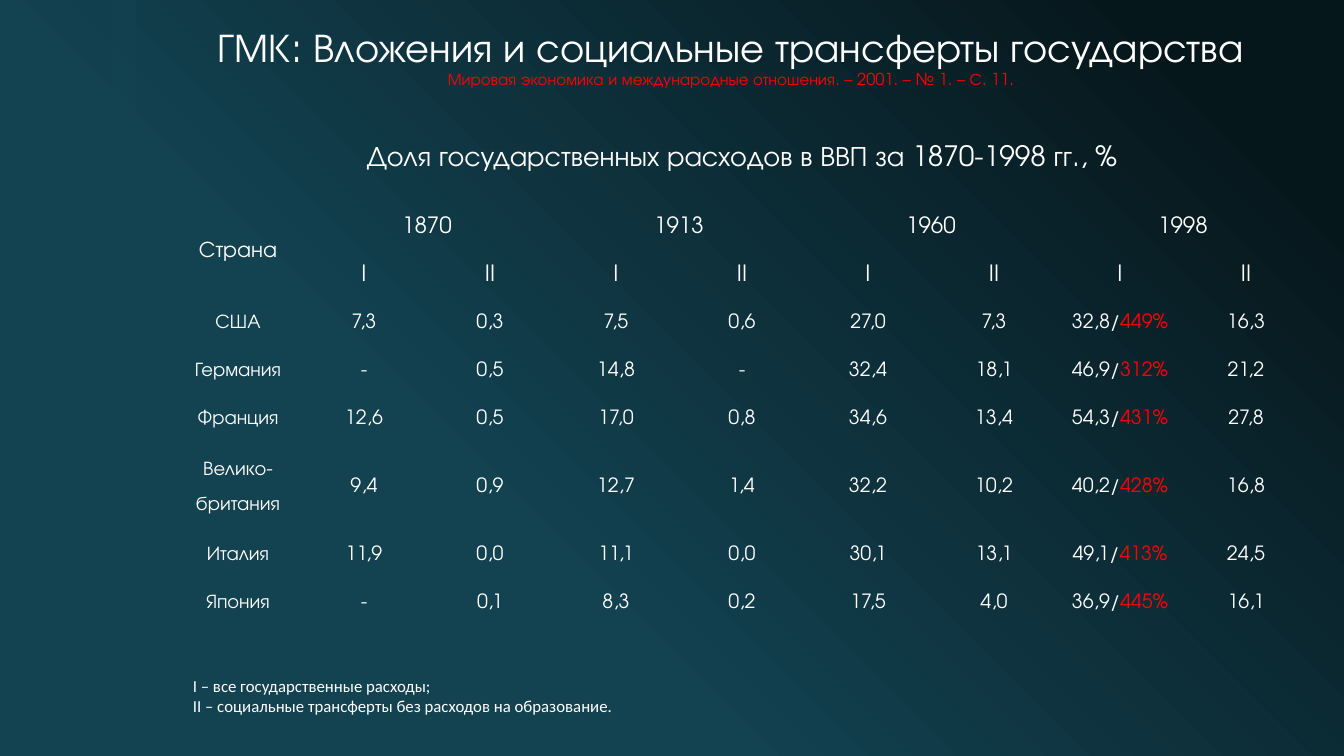
from lxml import etree
from pptx import Presentation
from pptx import util as u
from pptx.dml.color import RGBColor
from pptx.enum import shapes, text
from pptx.oxml import ns

PX = 12192000 / 1344
WHITE = RGBColor(0xFF, 0xFF, 0xFF)
RED = RGBColor(0xFF, 0x00, 0x00)
TEAL = RGBColor(0x13, 0x42, 0x51)
DARK = RGBColor(0x06, 0x17, 0x1C)
FONT = "TeX Gyre Adventor"
PLAIN_STYLE = "{2D5ABB26-0587-4C30-8999-92F81FD0307C}"


def px(*lengths):
    return [u.Emu(round(length * PX)) for length in lengths]


def add_run(paragraph, words, size, color=WHITE, font=FONT):
    run = paragraph.add_run()
    run.text = words
    run.font.size = u.Pt(size)
    run.font.name = font
    run.font.color.rgb = color


presentation = Presentation()
presentation.slide_width, presentation.slide_height = px(1344, 756)
slide = presentation.slides.add_slide(presentation.slide_layouts[6])

# Background gradient, dark in the top right corner
fill = slide.background.fill
fill.gradient()
fill.gradient_angle = 225
stops = slide.background._cSld.find(".//" + ns.qn("a:gsLst"))
for stop in list(stops):
    stops.remove(stop)
for position, color in [(10, DARK), (65, TEAL), (100, TEAL)]:
    stop = etree.SubElement(stops, ns.qn("a:gs"), pos=str(position * 1000))
    etree.SubElement(stop, ns.qn("a:srgbClr"), val=str(color))

# Translucent vertical band
band = slide.shapes.add_shape(shapes.MSO_SHAPE.RECTANGLE, *px(111, 0, 25, 756))
band.shadow.inherit = False
band.fill.solid()
band.fill.fore_color.rgb = TEAL
band.line.fill.background()
band_color = band.fill._xPr.find(".//" + ns.qn("a:srgbClr"))
etree.SubElement(band_color, ns.qn("a:alpha"), val="60000")

# Title and its source
title = slide.shapes.add_textbox(*px(140, 23, 1182, 71))
title.text_frame.word_wrap = True
title.text_frame.vertical_anchor = text.MSO_ANCHOR.BOTTOM
paragraph = title.text_frame.paragraphs[0]
paragraph.alignment = text.PP_ALIGN.CENTER
paragraph.line_spacing = 0.9
add_run(paragraph, "ГМК: Вложения и социальные трансферты государства", 28.8)
paragraph.add_line_break()
add_run(paragraph, "Мировая экономика и международные отношения. – 2001. – № 1. – С. 11.", 11.7, RED)

# Table of state spending
YEARS = ["1870", "1913", "1960", "1998"]
COUNTRIES = [
    ["США", "7,3", "0,3", "7,5", "0,6", "27,0", "7,3", "32,8/449%", "16,3"],
    ["Германия", "-", "0,5", "14,8", "-", "32,4", "18,1", "46,9/312%", "21,2"],
    ["Франция", "12,6", "0,5", "17,0", "0,8", "34,6", "13,4", "54,3/431%", "27,8"],
    ["Велико-\nбритания", "9,4", "0,9", "12,7", "1,4", "32,2", "10,2", "40,2/428%", "16,8"],
    ["Италия", "11,9", "0,0", "11,1", "0,0", "30,1", "13,1", "49,1/413%", "24,5"],
    ["Япония", "-", "0,1", "8,3", "0,2", "17,5", "4,0", "36,9/445%", "16,1"],
]
year_row = ["Страна"]
for year in YEARS:
    year_row += [year, ""]
rows = [
    ["Доля государственных расходов в ВВП за 1870-1998 гг., %"] + [""] * 8,
    year_row,
    [""] + ["I", "II"] * len(YEARS),
] + COUNTRIES
HEIGHTS = [68, 48, 48, 48, 48, 48, 88, 48, 48]
SIZES = [20, 16, 16] + [14] * len(COUNTRIES)

frame = slide.shapes.add_table(len(rows), 9, *px(175, 134, 1134, sum(HEIGHTS)))
table = frame.table
table.first_row = table.horz_banding = False
table._tbl.tblPr.find(ns.qn("a:tableStyleId")).text = PLAIN_STYLE
for column in table.columns:
    column.width = px(126)[0]

for row, values in enumerate(rows):
    table.rows[row].height = px(HEIGHTS[row])[0]
    for column, value in enumerate(values):
        cell = table.cell(row, column)
        cell.fill.background()
        cell.vertical_anchor = text.MSO_ANCHOR.MIDDLE
        cell.margin_left, cell.margin_right, cell.margin_top, cell.margin_bottom = px(2, 2, 2, 2)
        if not value:
            continue
        for index, line in enumerate(value.split("\n")):
            paragraph = cell.text_frame.paragraphs[0] if index == 0 else cell.text_frame.add_paragraph()
            paragraph.alignment = text.PP_ALIGN.CENTER
            paragraph.line_spacing = 1.15
            paragraph.space_after = u.Pt(10 if row else 0)
            share, slash, growth = line.partition("/")
            add_run(paragraph, share + slash, SIZES[row])
            if growth:
                add_run(paragraph, growth, SIZES[row], RED)

# Merged headings; the caption sits above the middle of its row
table.cell(0, 0).merge(table.cell(0, 8))
table.cell(0, 0).margin_bottom = px(24)[0]
table.cell(1, 0).merge(table.cell(2, 0))
for column in range(1, 9, 2):
    table.cell(1, column).merge(table.cell(1, column + 1))

# Legend
legend = slide.shapes.add_textbox(*px(183, 671, 1160, 70))
legend.text_frame.word_wrap = True
paragraph = legend.text_frame.paragraphs[0]
add_run(paragraph, "I – все государственные расходы;", 12, font="Calibri")
paragraph.add_line_break()
add_run(paragraph, "II – социальные трансферты без расходов на образование.", 12, font="Calibri")

presentation.save("out.pptx")
